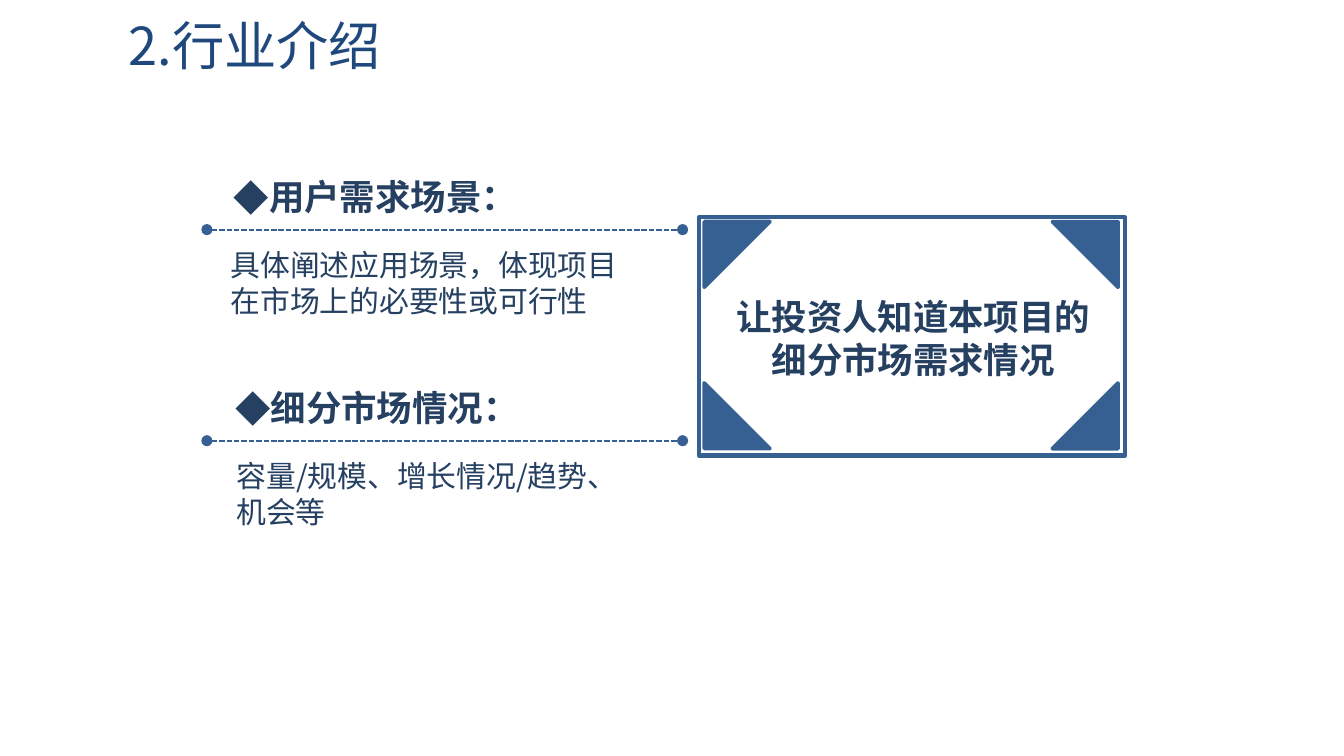
import pptx
import pptx.util
import pptx.dml.color
import pptx.enum.dml
import pptx.enum.shapes
import pptx.enum.text
import pptx.oxml
import pptx.oxml.ns
from dataclasses import dataclass
from lxml import etree

Cm = pptx.util.Cm
Pt = pptx.util.Pt
Align = pptx.enum.text.PP_ALIGN
Fit = pptx.enum.text.MSO_AUTO_SIZE
Shape = pptx.enum.shapes.MSO_SHAPE
qn = pptx.oxml.ns.qn

TITLE = "2.行业介绍"
GOAL = ["让投资人知道本项目的", "细分市场需求情况"]
# heading, its left; body, its left and width (cm)
TOPICS = [
    ("用户需求场景：", 3.68, "具体阐述应用场景，体现项目在市场上的必要性或可行性", 4.11, 7.92),
    ("细分市场情况：", 3.71, "容量/规模、增长情况/趋势、机会等", 4.22, 8.1),
]


@dataclass
class Theme:
    title: str = "1F497D"
    ink: str = "254061"
    blue: str = "376092"
    face: str = "Noto Sans CJK SC"
    title_face: str = "Noto Sans CJK JP"
    title_size: int = 28
    head_size: int = 19
    body_size: int = 16


theme = Theme()


def rgb(code):
    return pptx.dml.color.RGBColor.from_string(code)


def style(para, size, color=theme.ink, face=theme.face, bold=False):
    font = para.font
    font.size, font.bold, font.name = Pt(size), bold, face
    font.color.rgb = rgb(color)
    # East Asian glyphs take their own typeface element
    props = para._p.pPr.find(qn("a:defRPr"))
    etree.SubElement(props, qn("a:ea"), typeface=face)


def add_text(slide, box, lines, size, bold=False, align=Align.LEFT, bullet=None):
    frame = slide.shapes.add_textbox(*map(Cm, box)).text_frame
    frame.word_wrap = True
    frame.auto_size = Fit.SHAPE_TO_FIT_TEXT
    frame.text = "\n".join(lines)
    for para in frame.paragraphs:
        para.alignment = align
        if bullet:
            para.line_spacing = 1.3
            props = para._p.get_or_add_pPr()
            props.set("marL", str(Cm(0.79)))
            props.set("indent", str(Cm(-0.3)))
            etree.SubElement(props, qn("a:buFont"), typeface=theme.face)
            etree.SubElement(props, qn("a:buChar"), char=bullet)
        style(para, size, bold=bold)


def add_box(slide, kind, box, width, solid=True):
    shape = slide.shapes.add_shape(kind, *map(Cm, box))
    shape.shadow.inherit = False
    if solid:
        shape.fill.solid()
        shape.fill.fore_color.rgb = rgb(theme.blue)
    else:
        shape.fill.background()
    shape.line.color.rgb = rgb(theme.blue)
    shape.line.width = Pt(width)
    return shape


def add_rule(slide, left, right, top):
    """Dashed line with a dot at each end."""
    rule = slide.shapes.add_connector(
        pptx.enum.shapes.MSO_CONNECTOR.STRAIGHT, Cm(left), Cm(top), Cm(right), Cm(top))
    line = rule.line
    line.color.rgb = rgb(theme.blue)
    line.width = Pt(1)
    line.dash_style = pptx.enum.dml.MSO_LINE.SQUARE_DOT
    for end in ("a:headEnd", "a:tailEnd"):
        etree.SubElement(line._get_or_add_ln(), qn(end), type="oval")
    etree.SubElement(rule._element.spPr, qn("a:effectLst"))


def add_title(slide):
    title = slide.shapes.title
    title.left, title.top, title.width, title.height = map(Cm, (2.18, 0.05, 9.37, 1.6))
    frame = title.text_frame
    frame.text = TITLE
    frame.auto_size = Fit.NONE
    frame.vertical_anchor = pptx.enum.text.MSO_ANCHOR.MIDDLE
    para = frame.paragraphs[0]
    para.alignment = Align.LEFT
    style(para, theme.title_size, theme.title, theme.title_face)


def add_goal(slide):
    """Framed statement with a triangle in each corner."""
    add_box(slide, Shape.FLOWCHART_PROCESS, (13.21, 4.11, 8.05, 4.5), 2.25, solid=False)
    left, right, top, low, side = 13.31, 19.89, 4.19, 7.24, 1.24
    corners = [(left, low), (left, top), (right, top), (right, low)]
    for turn, (x, y) in enumerate(corners):
        corner = add_box(slide, Shape.RIGHT_TRIANGLE, (x, y, side, side), 2)
        corner.rotation = 90 * turn
    add_text(slide, (13.41, 5.46, 7.7, 1.88), GOAL, theme.head_size, True, Align.CENTER)


def add_topics(slide):
    first, step = 4.34, 3.99
    for row, (head, head_x, body, body_x, width) in enumerate(TOPICS):
        y = first + row * step
        add_text(slide, (head_x, y - 1.4, 8.1, 1.22), [head], theme.head_size,
                 True, Align.JUSTIFY, "◆")
        add_rule(slide, 3.91, 12.9, y)
        add_text(slide, (body_x, y + 0.2, width, 1.63), [body], theme.body_size)


def main():
    deck = pptx.Presentation()
    deck.slide_width, deck.slide_height = Cm(25.4), Cm(14.29)
    slide = deck.slides.add_slide(deck.slide_layouts[5])
    add_title(slide)
    add_goal(slide)
    add_topics(slide)
    deck.save("out.pptx")


if __name__ == "__main__":
    main()
